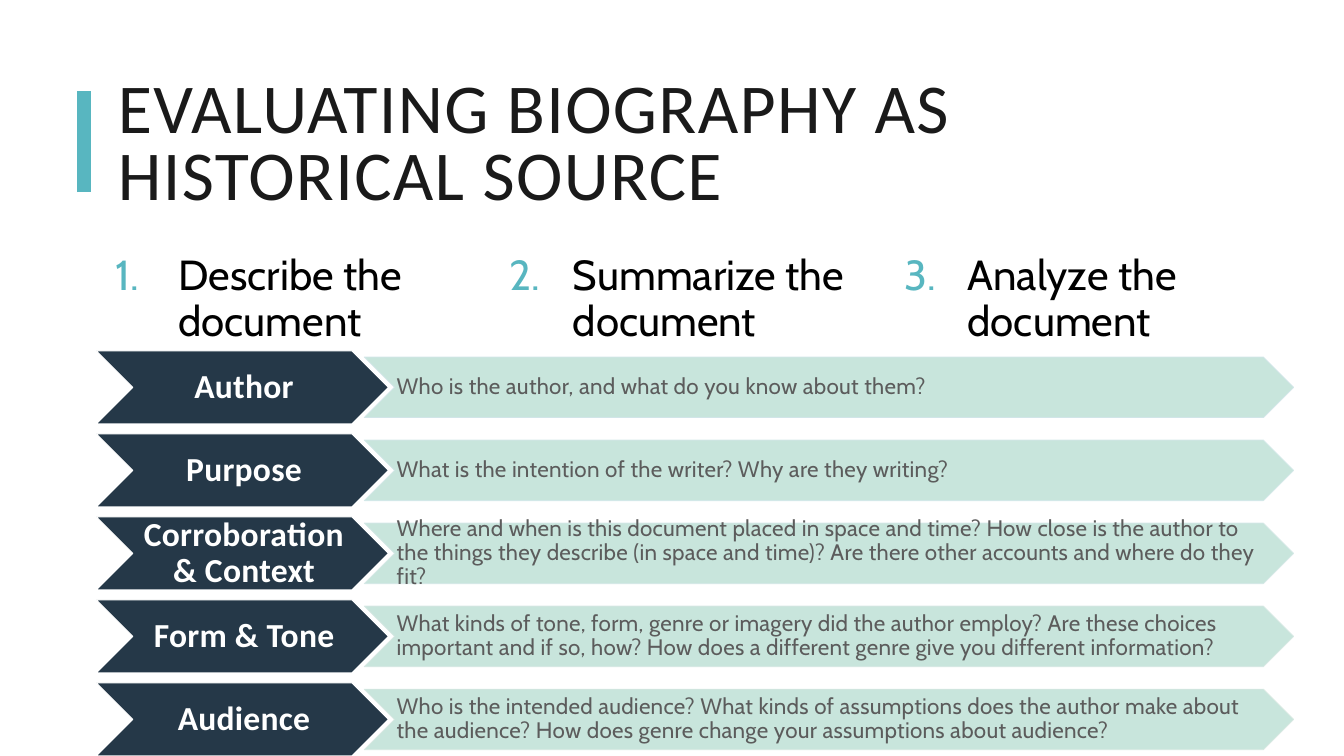
from lxml.etree import SubElement
from pptx import Presentation
from pptx.dml.color import RGBColor
from pptx.enum.shapes import MSO_CONNECTOR as Conn, MSO_SHAPE as Shape
from pptx.enum.text import MSO_ANCHOR as Anchor, PP_ALIGN as Align
from pptx.oxml.ns import qn
from pptx.util import Inches, Pt

HUES = {
    "teal": "58B6C0", "ink": "1A1A1A", "black": "000000", "navy": "253848",
    "mint": "C8E5DC", "gray": "5C5C5C", "white": "FFFFFF",
}
STEPS = ["Describe the document", "Summarize the document", "Analyze the document"]
ROWS = [
    ("Author", "D1E5E8", "Who is the author, and what do you know about them?"),
    ("Purpose", "D2E8E8", "What is the intention of the writer? Why are they writing?"),
    ("Corroboration & Context", "D4E8E6",
     "Where and when is this document placed in space and time? How close is the "
     "author to the things they describe (in space and time)? Are there other "
     "accounts and where do they fit?"),
    ("Form & Tone", "D5E8E3",
     "What kinds of tone, form, genre or imagery did the author employ? Are these "
     "choices important and if so, how? How does a different genre give you "
     "different information?"),
    ("Audience", "D6E8E1",
     "Who is the intended audience? What kinds of assumptions does the author make "
     "about the audience? How does genre change your assumptions about audience?"),
]


def tint(name):
    return RGBColor.from_string(HUES.get(name, name))


def write(para, text, size, font, hue, bold=False, space=0, lead=0.9, align=Align.LEFT):
    para.alignment = align
    para.line_spacing = lead
    run = para.add_run()
    run.text = text
    run.font.size = Pt(size)
    run.font.name = font
    run.font.bold = bold
    run.font.color.rgb = tint(hue)
    if space:
        run._r.get_or_add_rPr().set("spc", str(round(space * 100)))


class Deck:
    head = "Calibri"
    body = "Cabin"

    def __init__(self, wide, high):
        self.prs = Presentation()
        self.prs.slide_width = Inches(wide)
        self.prs.slide_height = Inches(high)
        self.slide = self.prs.slides.add_slide(self.prs.slide_layouts[6])

    def frame(self, shape, pads, anchor):
        frame = shape.text_frame
        frame.word_wrap = True
        frame.vertical_anchor = anchor
        (frame.margin_left, frame.margin_top,
         frame.margin_right, frame.margin_bottom) = map(Inches, pads)
        return frame

    def box(self, spot, pads, anchor):
        shape = self.slide.shapes.add_textbox(*map(Inches, spot))
        return self.frame(shape, pads, anchor)

    def bar(self, x, top, low, hue, width):
        line = self.slide.shapes.add_connector(
            Conn.STRAIGHT, Inches(x), Inches(low), Inches(x), Inches(top))
        line.line.color.rgb = tint(hue)
        line.line.width = Pt(width)
        SubElement(line._element.spPr, qn("a:effectLst"))

    def title(self, text, spot):
        frame = self.box(spot, (0.1, 0.05, 0.1, 0.05), Anchor.MIDDLE)
        write(frame.paragraphs[0], text, 100, self.head, "ink", space=2, lead=0.8)

    def steps(self, items, spot):
        frame = self.box(spot, (0.05,) * 4, Anchor.TOP)
        frame._txBody.bodyPr.set("numCol", str(len(items)))
        frame._txBody.bodyPr.set("spcCol", "0")
        for i, item in enumerate(items):
            para = frame.add_paragraph() if i else frame.paragraphs[0]
            para.space_before, para.space_after = Pt(24), Pt(4)
            write(para, item, 60, self.body, "black")
            props = para._p.get_or_add_pPr()
            props.set("marL", str(Inches(1.25)))
            props.set("indent", str(Inches(-1.25)))
            hue = SubElement(props, qn("a:buClr"))
            SubElement(hue, qn("a:srgbClr"), val=HUES["teal"])
            SubElement(props, qn("a:buFont"), typeface="+mj-lt")
            SubElement(props, qn("a:buAutoNum"), type="arabicPeriod")

    def arrow(self, text, spot, fill, edge, width, pads, alpha=100, **style):
        shape = self.slide.shapes.add_shape(Shape.CHEVRON, *map(Inches, spot))
        shape.shadow.inherit = False
        shape.fill.solid()
        shape.fill.fore_color.rgb = tint(fill)
        shape.line.color.rgb = tint(edge)
        shape.line.width = Pt(width)
        if alpha < 100:
            hue = shape.line._ln.find(".//" + qn("a:srgbClr"))
            SubElement(hue, qn("a:alpha"), val=str(alpha * 1000))
        frame = self.frame(shape, pads, Anchor.MIDDLE)
        write(frame.paragraphs[0], text, space=0.4, **style)

    def row(self, y, label, edge, text):
        self.arrow(label, (1.91, y, 5.8, 1.45), "navy", "white", 1.5,
                   (0.07, 0.03, 0, 0.03), size=48, font=self.head,
                   hue="white", bold=True, align=Align.CENTER)
        self.arrow(text, (7.23, y + 0.125, 18.44, 1.2), "mint", edge, 1.25,
                   (0.04, 0.02, 0, 0.02), alpha=90, size=32,
                   font=self.body, hue="gray")


def main():
    deck = Deck(26.67, 15)
    deck.bar(1.67, 1.81, 3.81, "teal", 20)
    deck.title("EVALUATING BIOGRAPHY AS HISTORICAL SOURCE", (2.24, 1.28, 23.59, 3.28))
    deck.steps(STEPS, (2.24, 5, 23.59, 1.95))
    first, last = 6.96, 13.55
    gap = (last - first) / (len(ROWS) - 1)
    for i, row in enumerate(ROWS):
        deck.row(first + i * gap, *row)
    deck.prs.save("out.pptx")


if __name__ == "__main__":
    main()
